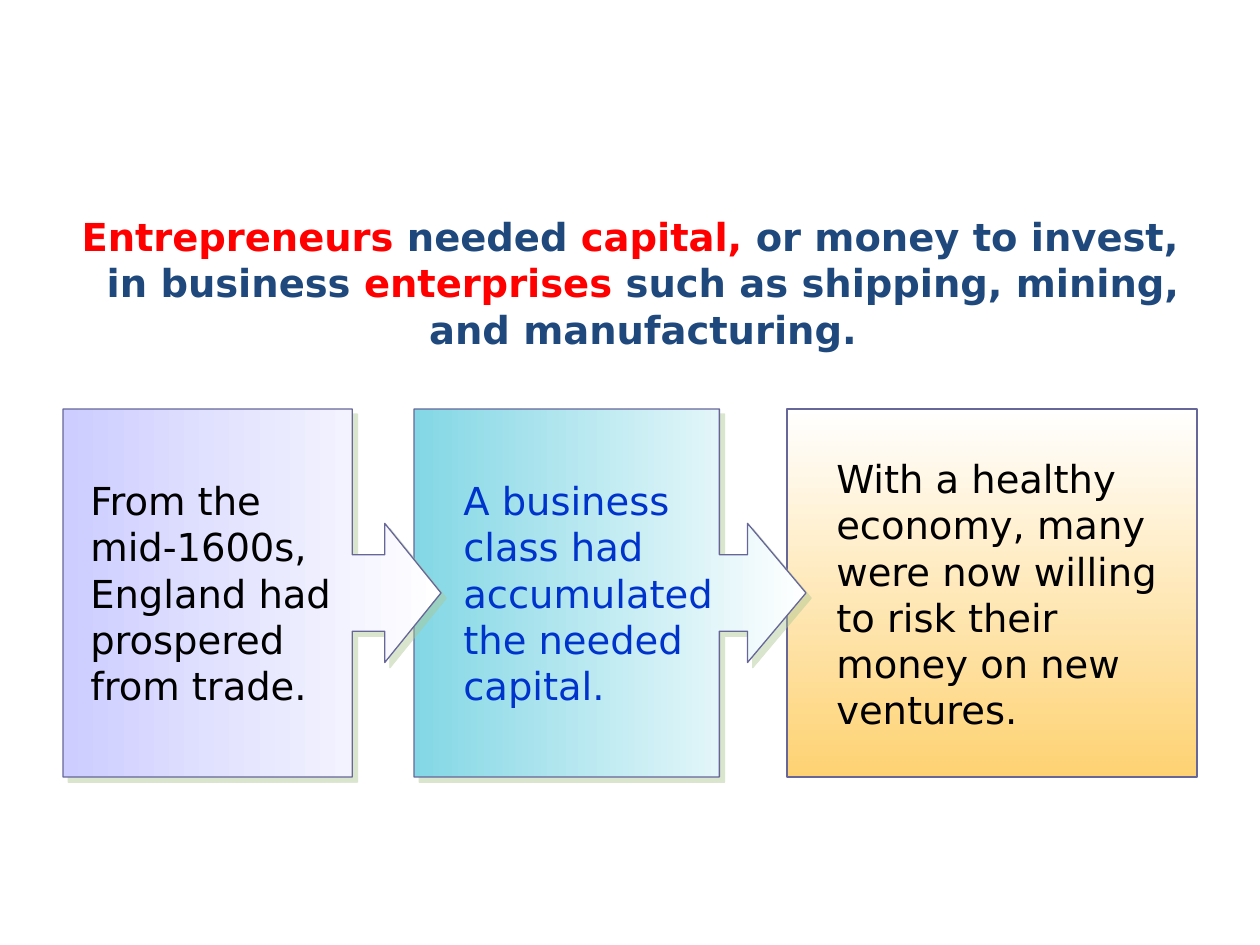
from lxml import etree
from pptx import Presentation
from pptx.dml.color import RGBColor
from pptx.enum.shapes import MSO_SHAPE
from pptx.enum.text import MSO_AUTO_SIZE, PP_ALIGN
from pptx.oxml.ns import qn
from pptx.util import Emu, Pt

RECT = MSO_SHAPE.RECTANGLE
UP_CALLOUT = MSO_SHAPE.UP_ARROW_CALLOUT
GROW = MSO_AUTO_SIZE.SHAPE_TO_FIT_TEXT
CENTER = PP_ALIGN.CENTER

EMU_PER_PX = 914400 / 126
ROW_TOP, ROW_HEIGHT = 409, 368
RED, NAVY, BLACK, BLUE = "FF0000", "1F497D", "000000", "0033CC"


def px(n):
    return Emu(round(n * EMU_PER_PX))


def rgb(value):
    return RGBColor.from_string(value)


class SlideBuilder:
    font, size = "DejaVu Sans", Pt(22)
    outline, shadow = "666699", "ADC793"

    def __init__(self, slide):
        self.slide = slide

    def panel(self, kind, x, y, w, h, end_color):
        """Outlined shape that fades from white at its top to end_color."""
        sp = self.slide.shapes.add_shape(kind, px(x), px(y), px(w), px(h))
        sp.shadow.inherit = False
        sp.fill.gradient()
        sp.fill.gradient_angle = 270
        for stop, color in zip(sp.fill.gradient_stops, ("FFFFFF", end_color)):
            stop.color.rgb = rgb(color)
        sp.line.color.rgb = rgb(self.outline)
        sp.line.width = Pt(0.75)
        return sp

    def callout(self, x, y, w, h, color, adjustments):
        """Up-arrow callout turned to point right, filling the given area."""
        sp = self.panel(UP_CALLOUT, x + (w - h) / 2, y + (h - w) / 2, h, w, color)
        sp.rotation = 90
        for i, value in enumerate(adjustments):
            sp.adjustments[i] = value
        effects = sp._element.spPr.find(qn("a:effectLst"))
        shadow = etree.SubElement(effects, qn("a:outerShdw"), dist=str(Pt(4.2)),
                                  dir="2700000", algn="ctr", rotWithShape="0")
        tint = etree.SubElement(shadow, qn("a:srgbClr"), val=self.shadow)
        etree.SubElement(tint, qn("a:alpha"), val="46000")

    def text(self, x, y, w, h, paragraphs, color):
        tf = self.slide.shapes.add_textbox(px(x), px(y), px(w), px(h)).text_frame
        tf.word_wrap = True
        tf.auto_size = GROW
        tf.text = "\n".join(paragraphs)
        for p in tf.paragraphs:
            p.font.name, p.font.size = self.font, self.size
            p.font.color.rgb = rgb(color)

    def heading(self, x, y, w, h, runs, hanging):
        tf = self.slide.shapes.add_textbox(px(x), px(y), px(w), px(h)).text_frame
        tf.word_wrap = True
        p = tf.paragraphs[0]
        p.alignment = CENTER
        p.font.name, p.font.size, p.font.bold = self.font, self.size, True
        pPr = p._p.get_or_add_pPr()
        pPr.set("marL", str(px(hanging)))
        pPr.set("indent", str(-px(hanging)))
        for text, color in runs:
            r = p.add_run()
            r.text = text
            r.font.color.rgb = rgb(color)


def main():
    prs = Presentation()
    prs.slide_width, prs.slide_height = px(1260), px(945)
    s = SlideBuilder(prs.slides.add_slide(prs.slide_layouts[6]))

    # Outcome panel
    s.panel(RECT, 787, ROW_TOP, 410, ROW_HEIGHT, "FED273")
    s.text(824, 449, 363, 294, ["With a healthy economy, many were now willing "
                                "to risk their money on new ventures."], BLACK)

    # Second step
    s.callout(414, ROW_TOP, 392, ROW_HEIGHT, "83D7E5", (0.208, 0.189, 0.159, 0.779))
    s.text(451, 471, 292, 247, ["A business class had accumulated",
                                "the needed capital."], BLUE)

    # First step
    s.callout(63, ROW_TOP, 378, ROW_HEIGHT, "CDCDFF", (0.208, 0.189, 0.153, 0.765))
    s.text(78, 471, 267, 275, ["From the mid-1600s, England had prospered "
                               "from trade."], BLACK)

    # Heading
    s.heading(63, 207, 1134, 63, [
        ("Entrepreneurs", RED),
        (" needed ", NAVY),
        ("capital,", RED),
        (" or money to invest, in business ", NAVY),
        ("enterprises", RED),
        (" such as shipping, mining, and manufacturing.", NAVY),
    ], hanging=26)

    prs.save("out.pptx")


if __name__ == "__main__":
    main()
